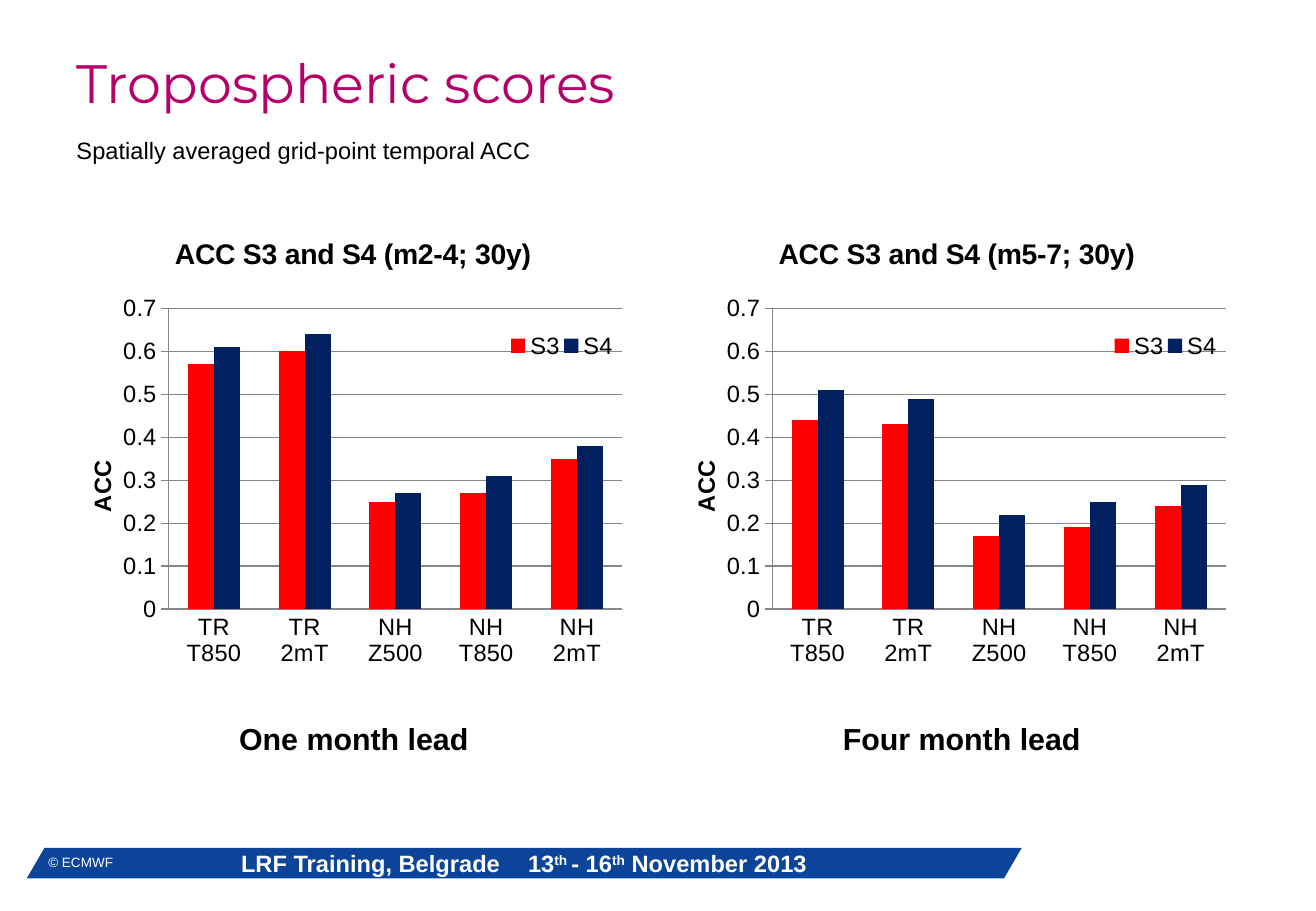
from pptx import Presentation
from pptx.chart.data import CategoryChartData
from pptx.dml.color import RGBColor
from pptx.enum.chart import XL_CHART_TYPE, XL_LEGEND_POSITION, XL_TICK_MARK
from pptx.enum.shapes import MSO_SHAPE
from pptx.enum.text import MSO_ANCHOR, MSO_AUTO_SIZE, PP_ALIGN
from pptx.oxml.xmlchemy import OxmlElement
from pptx.util import Cm, Pt

CATEGORIES = ["TR T850", "TR 2mT", "NH Z500", "NH T850", "NH 2mT"]
SERIES_COLOURS = {"S3": "FF0000", "S4": "002060"}
LEADS = [
    ("ACC S3 and S4 (m2-4; 30y)", "One month lead",
     {"S3": [0.57, 0.6, 0.25, 0.27, 0.35], "S4": [0.61, 0.64, 0.27, 0.31, 0.38]}),
    ("ACC S3 and S4 (m5-7; 30y)", "Four month lead",
     {"S3": [0.44, 0.43, 0.17, 0.19, 0.24], "S4": [0.51, 0.49, 0.22, 0.25, 0.29]}),
]


def colour(value):
    """Turn a hex string into a colour."""
    return RGBColor.from_string(value)


class ScoreSlide:
    """Hold the style and the current slide."""

    font = "Arial"
    title_font = "Montserrat"
    black, white, blue = "000000", "FFFFFF", "0B4499"
    magenta, grey = "B50069", "878787"

    def __init__(self, deck):
        """Add a title-only page to the deck."""
        self.page = deck.slides.add_slide(deck.slide_layouts[5])

    def style(self, font, size, ink, bold=False, name=None):
        """Apply the font settings."""
        font.name = name or self.font
        font.size = Pt(size)
        font.bold = bold
        font.color.rgb = colour(ink)

    def title(self, text, left, top, width, height):
        """Place and format the title placeholder."""
        box = self.page.shapes.title
        box.left, box.top, box.width, box.height = Cm(left), Cm(top), Cm(width), Cm(height)
        box.fill.solid()
        box.fill.fore_color.rgb = colour(self.white)
        frame = box.text_frame
        frame.auto_size = MSO_AUTO_SIZE.NONE
        frame.vertical_anchor = MSO_ANCHOR.MIDDLE
        para = frame.paragraphs[0]
        para.alignment = PP_ALIGN.LEFT
        para.line_spacing = 0.9
        span = para.add_run()
        span.text = text
        self.style(span.font, 32, self.magenta, name=self.title_font)

    def text(self, spans, left, top, width, height, size, ink=black, bold=False,
             anchor=MSO_ANCHOR.TOP, tab=None):
        """Add a text box from (text, is superscript) pairs."""
        box = self.page.shapes.add_textbox(Cm(left), Cm(top), Cm(width), Cm(height))
        frame = box.text_frame
        frame.word_wrap = True
        frame.vertical_anchor = anchor
        para = frame.paragraphs[0]
        if tab:
            stops = OxmlElement("a:tabLst")
            stop = OxmlElement("a:tab")
            stop.set("pos", str(Cm(tab)))
            stop.set("algn", "l")
            stops.append(stop)
            para._p.get_or_add_pPr().append(stops)
        for text, raised in spans:
            span = para.add_run()
            span.text = text
            self.style(span.font, size, ink, bold)
            if raised:
                span._r.get_or_add_rPr().set("baseline", "30000")

    def banner(self, left, top, width, height):
        """Add the slanted footer bar."""
        bar = self.page.shapes.add_shape(
            MSO_SHAPE.PARALLELOGRAM, Cm(left), Cm(top), Cm(width), Cm(height))
        bar.adjustments[0] = 0.58
        bar.shadow.inherit = False
        bar.fill.solid()
        bar.fill.fore_color.rgb = colour(self.blue)
        bar.line.fill.background()

    def arrange(self, chart, target, **settings):
        """Set the manual layout of one part of a chart."""
        part = chart.element.xpath("c:chart/" + target)[0]
        found = part.xpath("c:layout")
        layout = found[0] if found else OxmlElement("c:layout")
        if not found:
            part.insert(0, layout)
        manual = OxmlElement("c:manualLayout")
        for name, value in settings.items():
            item = OxmlElement("c:" + name)
            item.set("val", str(value))
            manual.append(item)
        layout.append(manual)

    def caption(self, owner, text, size):
        """Write the title of a chart or an axis."""
        owner.has_title = True
        frame = (owner.chart_title if hasattr(owner, "chart_title") else owner.axis_title).text_frame
        span = frame.paragraphs[0].add_run()
        span.text = text
        self.style(span.font, size, self.black, True)
        return frame

    def hairline(self, line):
        """Format an axis or grid line."""
        line.color.rgb = colour(self.grey)
        line.width = Pt(0.75)

    def chart(self, title, scores, left, top, width, height):
        """Add a clustered column chart of scores."""
        data = CategoryChartData()
        data.categories = CATEGORIES
        for name, values in scores.items():
            data.add_series(name, values)
        chart = self.page.shapes.add_chart(
            XL_CHART_TYPE.COLUMN_CLUSTERED, Cm(left), Cm(top), Cm(width), Cm(height), data).chart
        self.style(chart.font, 14, self.black)
        self.caption(chart, title, 16.8)

        plot = chart.plots[0]
        plot.vary_by_categories = False
        plot.gap_width = 150
        plot.overlap = 0
        for series in plot.series:
            series.format.fill.solid()
            series.format.fill.fore_color.rgb = colour(SERIES_COLOURS[series.name])

        category_axis, value_axis = chart.category_axis, chart.value_axis
        category_axis.major_tick_mark = XL_TICK_MARK.NONE
        value_axis.major_tick_mark = XL_TICK_MARK.OUTSIDE
        value_axis.minimum_scale = 0
        value_axis.maximum_scale = 0.7
        value_axis.major_unit = 0.1
        value_axis.has_major_gridlines = True
        for line in (category_axis.format.line, value_axis.format.line,
                     value_axis.major_gridlines.format.line):
            self.hairline(line)
        frame = self.caption(value_axis, "ACC", 14)
        frame._txBody.bodyPr.set("rot", "-5400000")
        frame._txBody.bodyPr.set("vert", "horz")

        chart.has_legend = True
        chart.legend.position = XL_LEGEND_POSITION.BOTTOM
        chart.legend.include_in_layout = False
        self.style(chart.legend.font, 14, self.black)

        edges = {"xMode": "edge", "yMode": "edge"}
        self.arrange(chart, "c:plotArea", layoutTarget="inner", **edges,
                     x=0.188, y=0.199, w=0.781, h=0.573)
        self.arrange(chart, "c:legend", **edges, x=0.77, y=0.24, w=0.19, h=0.06)
        self.arrange(chart, "c:title", **edges, x=0.19, y=0.05)
        self.arrange(chart, "c:plotArea/c:valAx/c:title", **edges, x=0.04, y=0.48)


def main():
    """Build the slide of tropospheric scores."""
    deck = Presentation()
    deck.slide_width, deck.slide_height = Cm(27.51), Cm(19.05)
    slide = ScoreSlide(deck)
    slide.banner(0.56, 17.73, 20.8, 0.64)
    slide.text([("LRF Training, Belgrade\t13", False), ("th ", True), ("- 16", False),
                ("th", True), (" November 2013", False)],
               4.79, 17.73, 13, 0.64, 14, slide.white, True, MSO_ANCHOR.MIDDLE, tab=6)
    slide.text([("© ECMWF", False)], 0.76, 17.73, 5, 0.61, 8, slide.white)
    slide.title("Tropospheric scores", 1.35, 0.91, 24.77, 1.78)
    slide.text([("Spatially averaged grid-point temporal ACC", False)], 1.35, 2.72, 12, 0.86, 14)
    for index, (title, lead, scores) in enumerate(LEADS):
        offset = 12.62 * index
        slide.chart(title, scores, 1.24 + offset, 4.27, 12.15, 10.97)
        slide.text([(lead, False)], 4.75 + offset, 14.94, 6.4, 1.02, 18, bold=True)
    deck.save("out.pptx")


if __name__ == "__main__":
    main()
